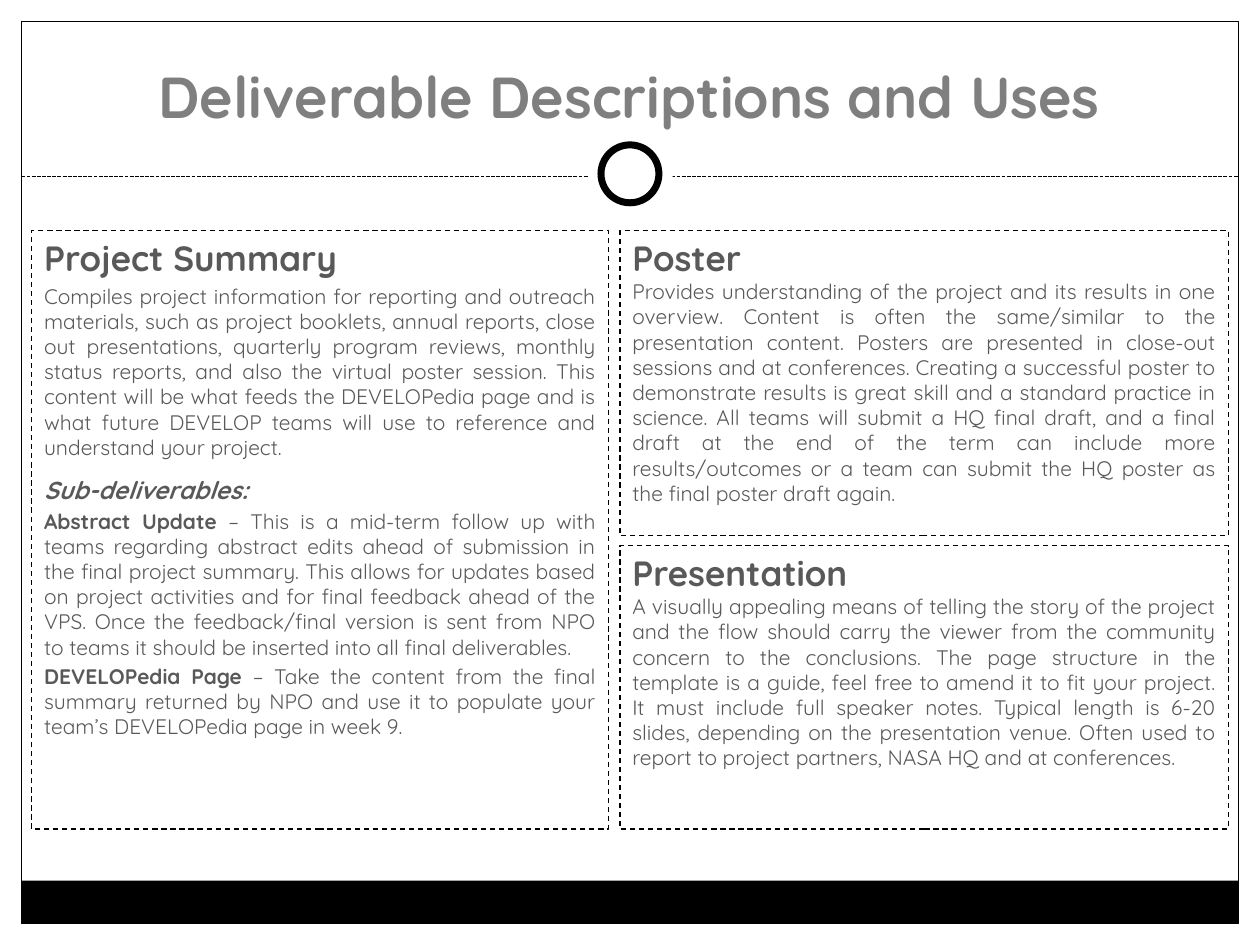
from dataclasses import dataclass

from lxml.etree import SubElement
from pptx import Presentation
from pptx.dml.color import RGBColor
from pptx.enum.dml import MSO_LINE
from pptx.enum.shapes import MSO_CONNECTOR, MSO_SHAPE
from pptx.enum.text import MSO_ANCHOR, MSO_AUTO_SIZE, PP_ALIGN
from pptx.oxml.ns import qn
from pptx.util import Inches, Pt

FONT = "Quicksand"
BLACK, WHITE, TITLE_GRAY, TEXT_GRAY = "000000", "FFFFFF", "7F7F7F", "595959"


@dataclass
class Segment:
    text: str
    size: float = 12
    bold: bool = False
    italic: bool = False
    color: str = TEXT_GRAY


@dataclass
class Block:
    segments: list[Segment]
    align: PP_ALIGN = PP_ALIGN.JUSTIFY
    space_before: float = 0


@dataclass
class Panel:
    box: tuple[float, float, float, float]
    blocks: list[Block]


def heading(text: str) -> Block:
    return Block([Segment(text, 20, True)], PP_ALIGN.LEFT)


SUMMARY = Panel((0.25, 1.83, 4.58, 4.75), [
    heading("Project Summary"),
    Block([Segment(
        "Compiles project information for reporting and outreach materials, such as project "
        "booklets, annual reports, close out presentations, quarterly program reviews, monthly "
        "status reports, and also the virtual poster session. This content will be what feeds "
        "the DEVELOPedia page and is what future DEVELOP teams will use to reference and "
        "understand your project.")], space_before=2.4),
    Block([Segment("Sub-deliverables:", 14, True, True)], space_before=8.6),
    Block([Segment("Abstract Update ", bold=True), Segment(
        "– This is a mid-term follow up with teams regarding abstract edits ahead of submission "
        "in the final project summary. This allows for updates based on project activities and "
        "for final feedback ahead of the VPS. Once the feedback/final version is sent from NPO "
        "to teams it should be inserted into all final deliverables.")], space_before=2.4),
    Block([Segment("DEVELOPedia Page ", bold=True), Segment(
        "– Take the content from the final summary returned by NPO and use it to populate your "
        "team’s DEVELOPedia page in week 9.")], space_before=2.4),
])

RIGHT_PANELS = [
    Panel((4.92, 1.83, 4.83, 2.42), [
        heading("Poster"),
        Block([Segment(
            "Provides understanding of the project and its results in one overview. Content is "
            "often the same/similar to the presentation content. Posters are presented in "
            "close-out sessions and at conferences. Creating a successful poster to demonstrate "
            "results is great skill and a standard practice in science. All teams will submit a "
            "HQ final draft, and a final draft at the end of the term can include more "
            "results/outcomes or a team can submit the HQ poster as the final poster draft "
            "again.")]),
    ]),
    Panel((4.92, 4.33, 4.83, 2.25), [
        heading("Presentation"),
        Block([Segment(
            "A visually appealing means of telling the story of the project and the flow should "
            "carry the viewer from the community concern to the conclusions. The page structure "
            "in the template is a guide, feel free to amend it to fit your project. It must "
            "include full speaker notes. Typical length is 6-20 slides, depending on the "
            "presentation venue. Often used to report to project partners, NASA HQ and at "
            "conferences.")]),
    ]),
]


def rgb(color: str) -> RGBColor:
    return RGBColor.from_string(color)


def place(shape, box: tuple[float, float, float, float]) -> None:
    shape.left, shape.top, shape.width, shape.height = map(Inches, box)


def style_line(line, width: float, dash=None) -> None:
    line.color.rgb = rgb(BLACK)
    line.width = Pt(width)
    if dash is not None:
        line.dash_style = dash


def add_plain_shape(slide, kind: MSO_SHAPE, box: tuple[float, float, float, float],
                    fill: str | None = None, line_width: float = 0):
    shape = slide.shapes.add_shape(kind, *map(Inches, box))
    shape.shadow.inherit = False
    if fill:
        shape.fill.solid()
        shape.fill.fore_color.rgb = rgb(fill)
    else:
        shape.fill.background()
    if line_width:
        style_line(shape.line, line_width)
    else:
        shape.line.fill.background()
    return shape


def write_blocks(shape, blocks: list[Block], anchor: MSO_ANCHOR = MSO_ANCHOR.TOP) -> None:
    frame = shape.text_frame
    frame.word_wrap = True
    frame.auto_size = MSO_AUTO_SIZE.NONE
    frame.vertical_anchor = anchor
    for index, block in enumerate(blocks):
        paragraph = frame.paragraphs[0] if index == 0 else frame.add_paragraph()
        paragraph.alignment = block.align
        paragraph.space_before = Pt(block.space_before)
        properties = paragraph._p.get_or_add_pPr()
        properties.set("marL", "0")
        properties.set("indent", "0")
        SubElement(properties, qn("a:buNone"))
        for segment in block.segments:
            run = paragraph.add_run()
            run.text = segment.text
            run.font.name = FONT
            run.font.size = Pt(segment.size)
            run.font.bold = segment.bold
            run.font.italic = segment.italic
            run.font.color.rgb = rgb(segment.color)


def fill_panel(shape, panel: Panel) -> None:
    style_line(shape.line, 0.75, MSO_LINE.DASH)
    write_blocks(shape, panel.blocks)


def add_frame(slide) -> None:
    # Footer band and page border
    add_plain_shape(slide, MSO_SHAPE.RECTANGLE, (0.17, 6.99, 9.66, 0.34), BLACK)
    add_plain_shape(slide, MSO_SHAPE.RECTANGLE, (0.17, 0.17, 9.66, 7.16), line_width=0.75)
    # Dashed divider with a ring in its gap
    divider = slide.shapes.add_connector(
        MSO_CONNECTOR.STRAIGHT, Inches(0.17), Inches(1.4), Inches(9.83), Inches(1.4))
    style_line(divider.line, 0.75, MSO_LINE.SQUARE_DOT)
    SubElement(divider._element.spPr, qn("a:effectLst"))
    add_plain_shape(slide, MSO_SHAPE.OVAL, (4.67, 1.05, 0.67, 0.67), WHITE)
    add_plain_shape(slide, MSO_SHAPE.OVAL, (4.77, 1.15, 0.46, 0.46), WHITE, 4)


def main() -> None:
    presentation = Presentation()
    presentation.slide_width, presentation.slide_height = Inches(10), Inches(7.5)
    slide = presentation.slides.add_slide(presentation.slide_layouts[1])
    add_frame(slide)

    # Title
    title = slide.shapes.title
    place(title, (0.33, 0.25, 9.33, 0.83))
    title_text = Segment("Deliverable Descriptions and Uses", 33, True, color=TITLE_GRAY)
    write_blocks(title, [Block([title_text], PP_ALIGN.CENTER)], MSO_ANCHOR.BOTTOM)

    # Left panel in the body placeholder, right panels as boxes
    body = slide.placeholders[1]
    place(body, SUMMARY.box)
    fill_panel(body, SUMMARY)
    for panel in RIGHT_PANELS:
        fill_panel(add_plain_shape(slide, MSO_SHAPE.RECTANGLE, panel.box), panel)

    presentation.save("out.pptx")


if __name__ == "__main__":
    main()
